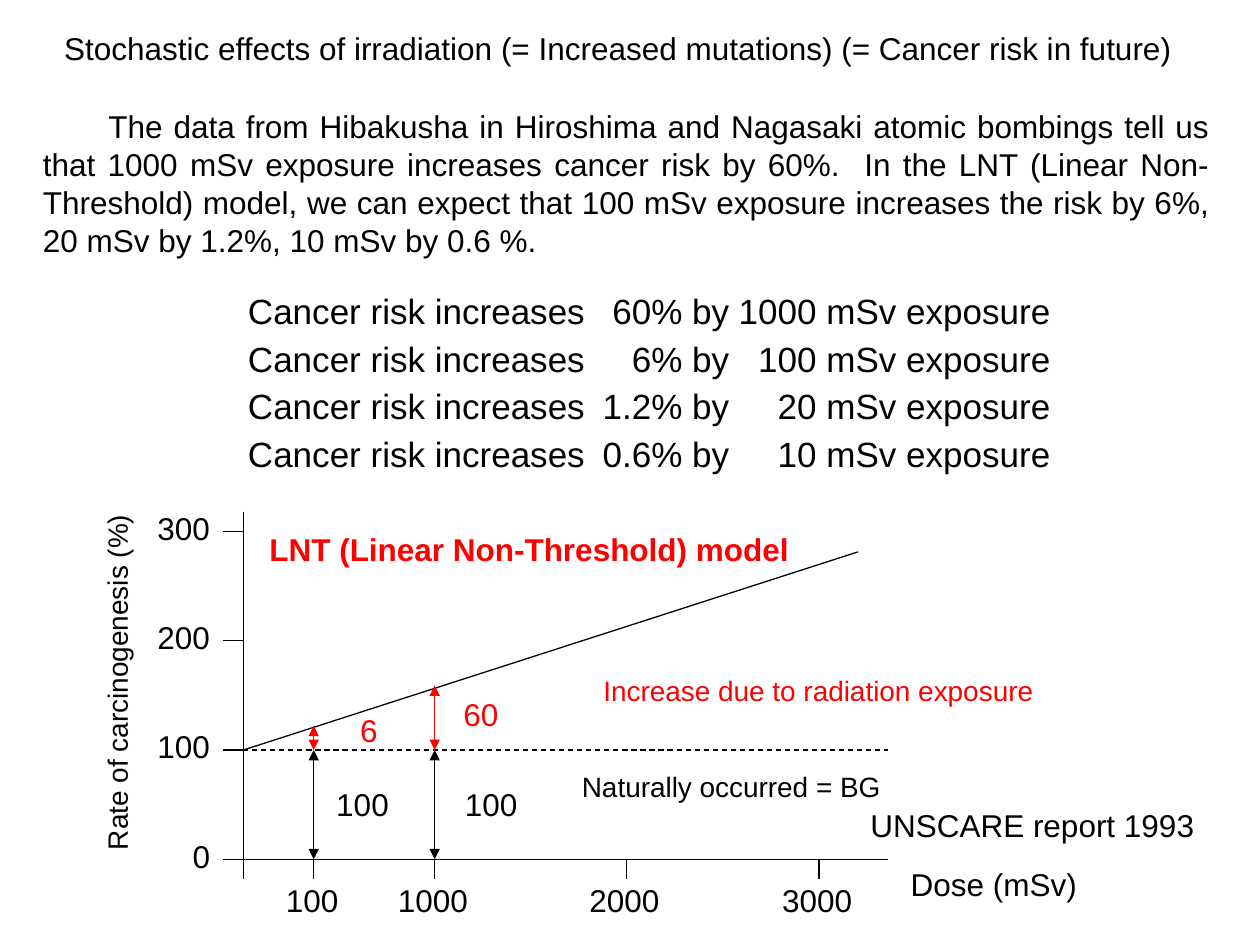
from lxml.etree import SubElement
from pptx import Presentation
from pptx.dml.color import RGBColor
from pptx.enum.dml import MSO_LINE_DASH_STYLE as Dash
from pptx.enum.shapes import MSO_CONNECTOR as Connector
from pptx.enum.text import MSO_ANCHOR as Anchor, PP_ALIGN as Align
from pptx.oxml.ns import qn
from pptx.util import Inches, Pt

COLORS = {"black": "000000", "red": "FF0000"}
FONT = "Arial"

TITLE = "Stochastic effects of irradiation (= Increased mutations) (= Cancer risk in future)"
BODY = (
    "The data from Hibakusha in Hiroshima and Nagasaki atomic bombings tell us that "
    "1000 mSv exposure increases cancer risk by 60%.  In the LNT (Linear Non-Threshold) "
    "model, we can expect that 100 mSv exposure increases the risk by 6%, 20 mSv by 1.2%, "
    "10 mSv by 0.6 %."
)
RISKS = [("60%", 1000), ("6%", 100), ("1.2%", 20), ("0.6%", 10)]
RISK_TABS = (3.82, 6.37)

# Chart geometry in inches
AXIS_X, AXIS_Y = 1.93, 6.82
AXIS_TOP, AXIS_RIGHT = 4.06, 7.05
RATE_STEP = 0.867  # height of 100 %
TICK = 0.16
RATES = [0, 100, 200, 300]
DOSES = {100: 2.49, 1000: 3.45, 2000: 4.97, 3000: 6.5}
BACKGROUND_Y = AXIS_Y - RATE_STEP
LNT_END = (6.81, 4.38)
INCREASE_TOPS = {100: 5.76, 1000: 5.44}

# text, (left, top, width), size, colour, bold
NOTES = [
    ("Dose (mSv)", (7.13, 6.82, 1.53), 18, "black", False),
    ("UNSCARE report 1993", (6.81, 6.35, 2.8), 18, "black", False),
    ("100", (2.57, 6.18, 0.62), 18, "black", False),
    ("100", (3.59, 6.18, 0.62), 18, "black", False),
    ("60", (3.58, 5.47, 0.48), 18, "red", False),
    ("6", (2.76, 5.59, 0.34), 18, "red", False),
    ("Increase due to radiation exposure", (4.69, 5.3, 3.66), 16, "red", False),
    ("Naturally occurred = BG", (4.52, 6.06, 2.6), 16, "black", False),
    ("LNT (Linear Non-Threshold) model", (2.04, 4.16, 4.37), 18, "red", True),
]


def put_text(shape, text, left, top, width, height=0.4, size=18, color="black",
             bold=False, align=Align.LEFT, wrap=False):
    """Place the shape, fill it with one formatted paragraph and return that paragraph."""
    shape.left, shape.top = Inches(left), Inches(top)
    shape.width, shape.height = Inches(width), Inches(height)
    frame = shape.text_frame
    frame.word_wrap = wrap
    frame.vertical_anchor = Anchor.TOP
    paragraph = frame.paragraphs[0]
    paragraph.alignment = align
    paragraph.space_before = Pt(0)
    run = paragraph.add_run()
    run.text = text
    run.font.name, run.font.size, run.font.bold = FONT, Pt(size), bold
    run.font.color.rgb = RGBColor.from_string(COLORS[color])
    return paragraph


def add_text(slide, text, left, top, width, **text_format):
    shape = slide.shapes.add_textbox(0, 0, 0, 0)
    return shape, put_text(shape, text, left, top, width, **text_format)


def add_line(slide, start, end, color="black", dashed=False, arrows=False):
    points = [Inches(value) for value in (*start, *end)]
    connector = slide.shapes.add_connector(Connector.STRAIGHT, *points)
    line = connector.line
    line.color.rgb = RGBColor.from_string(COLORS[color])
    line.width = Pt(0.75)
    if dashed:
        line.dash_style = Dash.DASH
    if arrows:
        for name in ("a:headEnd", "a:tailEnd"):
            SubElement(line._get_or_add_ln(), qn(name), type="triangle")
    SubElement(connector._element.spPr, qn("a:effectLst"))


def add_heading(slide):
    title, body = slide.placeholders
    put_text(title, TITLE, 0.41, 0.18, 9.07)
    paragraph = put_text(body, BODY, 0.24, 0.8, 9.46, height=1.31,
                         align=Align.JUSTIFY, wrap=True)
    properties = paragraph._p.get_or_add_pPr()
    properties.set("marL", "0")
    properties.set("indent", str(Inches(0.52)))
    SubElement(properties, qn("a:buNone"))


def add_risks(slide):
    for row, (risk, dose) in enumerate(RISKS):
        text = f"Cancer risk increases\t{risk} by\t{dose} mSv exposure"
        _, paragraph = add_text(slide, text, 1.87, 2.25 + row * 0.377, 6.63,
                                height=0.44, size=20)
        tabs = SubElement(paragraph._p.get_or_add_pPr(), qn("a:tabLst"))
        for position in RISK_TABS:
            SubElement(tabs, qn("a:tab"), pos=str(Inches(position)), algn="r")


def number_width(number):
    return 0.2 + 0.14 * len(str(number))


def add_axes(slide):
    add_line(slide, (AXIS_X, AXIS_TOP), (AXIS_X, AXIS_Y + TICK))
    add_line(slide, (AXIS_X, AXIS_Y), (AXIS_RIGHT, AXIS_Y))
    for rate in RATES:
        y = AXIS_Y - rate / 100 * RATE_STEP
        width = number_width(rate)
        add_line(slide, (AXIS_X, y), (AXIS_X - TICK, y))
        add_text(slide, str(rate), AXIS_X - TICK - width, y - 0.23, width)
    for dose, x in DOSES.items():
        width = number_width(dose)
        add_line(slide, (x, AXIS_Y), (x, AXIS_Y + TICK))
        add_text(slide, str(dose), x - width / 2 - 0.01, 6.94, width)
    label, _ = add_text(slide, "Rate of carcinogenesis (%)", -0.52, 5.21, 2.9,
                        height=0.37, size=16)
    label.rotation = 270


def add_model(slide):
    origin = (AXIS_X, BACKGROUND_Y)
    add_line(slide, origin, (AXIS_RIGHT, BACKGROUND_Y), dashed=True)
    add_line(slide, origin, LNT_END)
    for dose, top in INCREASE_TOPS.items():
        x = DOSES[dose]
        add_line(slide, (x, BACKGROUND_Y), (x, AXIS_Y), arrows=True)
        add_line(slide, (x, top), (x, BACKGROUND_Y), color="red", arrows=True)
    for text, place, size, color, bold in NOTES:
        add_text(slide, text, *place, size=size, color=color, bold=bold)


def main():
    presentation = Presentation()
    presentation.slide_width, presentation.slide_height = Inches(10), Inches(7.5)
    slide = presentation.slides.add_slide(presentation.slide_layouts[1])
    add_heading(slide)
    add_risks(slide)
    add_axes(slide)
    add_model(slide)
    presentation.save("out.pptx")


if __name__ == "__main__":
    main()
